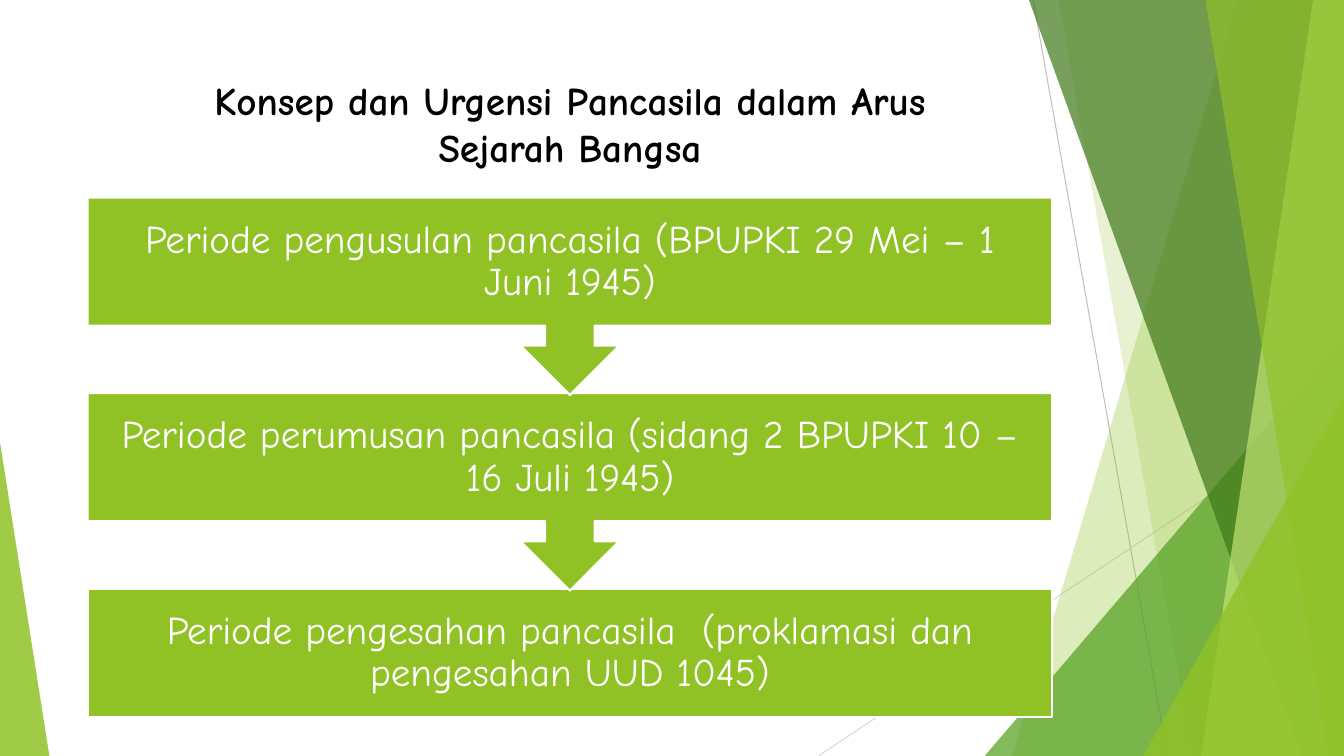
from lxml.etree import SubElement as Sub
from pptx import Presentation
from pptx.dml.color import RGBColor
from pptx.enum.shapes import MSO_CONNECTOR as Conn, MSO_SHAPE as Shape
from pptx.enum.text import MSO_ANCHOR as Anchor, MSO_AUTO_SIZE as Auto, PP_ALIGN as Align
from pptx.oxml.ns import qn
from pptx.util import Pt

LIME = RGBColor(0x90, 0xC2, 0x26)
GREEN = RGBColor(0x54, 0xA0, 0x21)
DARK = RGBColor(0x3F, 0x78, 0x19)
PALE = RGBColor(0xC0, 0xE4, 0x74)
GRAY = RGBColor(0xBF, 0xBF, 0xBF)
SILVER = RGBColor(0xD9, 0xD9, 0xD9)
WHITE = RGBColor(0xFF, 0xFF, 0xFF)
BLACK = RGBColor(0, 0, 0)
FONT = "Comic Neue"
WIDE, HIGH = 960, 540

LINES = [((738, 0), (834, 540), GRAY), ((960, 290), (584.6, 540), SILVER)]
BANDS = [
    (884.2, 722.9, LIME, 30),
    (756, 851.8, LIME, 20),
    (735.1, 929.5, DARK, 70),
    (938.2, 858.2, PALE, 70),
    (861.1, 949, LIME, 65),
]
PEAKS = [
    (703.4, 239.8, 256.6, 1, GREEN, 72),
    (816.5, 283, 143.5, 1, LIME, 80),
    (0, 316, 35.3, 0, LIME, 85),
]
TITLE = "Konsep dan Urgensi Pancasila dalam Arus Sejarah Bangsa"
STEPS = [
    "Periode pengusulan pancasila (BPUPKI 29 Mei – 1 Juni 1945)",
    "Periode perumusan pancasila (sidang 2 BPUPKI 10 – 16 Juli 1945)",
    "Periode pengesahan pancasila  (proklamasi dan pengesahan UUD 1045)",
]


def tint(shape, color, alpha):
    shape.shadow.inherit = False
    shape.line.fill.background()
    shape.fill.solid()
    shape.fill.fore_color.rgb = color
    node = shape.fill._xPr.find(".//" + qn("a:srgbClr"))
    Sub(node, qn("a:alpha")).set("val", str(alpha * 1000))


def add_line(slide, x, y, start, end, color):
    line = slide.shapes.add_connector(
        Conn.STRAIGHT, Pt(x + start[0]), Pt(y + start[1]), Pt(x + end[0]), Pt(y + end[1]))
    line.line.color.rgb = color
    line.line.width = Pt(0.75)
    Sub(line._element.spPr, qn("a:effectLst"))


def add_band(slide, x, y, w, h, top, foot, color, alpha):
    pen = slide.shapes.build_freeform(x + top, y, scale=Pt(1))
    pen.add_line_segments([(x + w, y), (x + w, y + h), (x + foot, y + h)], close=True)
    tint(pen.convert_to_shape(), color, alpha)


def add_peak(slide, x, y, h, left, top, width, tip, color, alpha):
    peak = slide.shapes.add_shape(
        Shape.ISOSCELES_TRIANGLE, Pt(x + left), Pt(y + top), Pt(width), Pt(h - top))
    peak.adjustments[0] = tip
    tint(peak, color, alpha)


def add_decor(slide, x, y, w, h):
    for line in LINES:
        add_line(slide, x, y, *line)
    for band in BANDS[:2]:
        add_band(slide, x, y, w, h, *band)
    add_peak(slide, x, y, h, *PEAKS[0])
    for band in BANDS[2:]:
        add_band(slide, x, y, w, h, *band)
    for peak in PEAKS[1:]:
        add_peak(slide, x, y, h, *peak)


def write(frame, text, color, bold):
    frame.text = text
    frame.word_wrap = True
    para = frame.paragraphs[0]
    para.alignment = Align.CENTER
    font = para.runs[0].font
    font.name, font.size, font.bold = FONT, Pt(28), bold
    font.color.rgb = color
    return para


def add_title(slide, x, y, w, h):
    title = slide.shapes.title
    title.left, title.top, title.width, title.height = Pt(x), Pt(y), Pt(w), Pt(h)
    frame = title.text_frame
    write(frame, TITLE, BLACK, True)
    frame.auto_size = Auto.NONE
    frame.vertical_anchor = Anchor.TOP


def add_step(slide, kind, text, x, y, w, h):
    step = slide.shapes.add_shape(kind, Pt(x), Pt(y), Pt(w), Pt(h))
    step.shadow.inherit = False
    step.fill.solid()
    step.fill.fore_color.rgb = LIME
    step.line.color.rgb = WHITE
    step.line.width = Pt(1.5)
    frame = step.text_frame
    frame.margin_left = frame.margin_right = Pt(15.8)
    frame.margin_top = frame.margin_bottom = Pt(15.8)
    frame.vertical_anchor = Anchor.MIDDLE
    write(frame, text, WHITE, False).line_spacing = 0.9
    return step


def add_flow(slide, x, y, w, h):
    box = 91.5
    pitch = (h - box) / (len(STEPS) - 1)
    tall = pitch + 1.4
    last = len(STEPS) - 1
    add_step(slide, Shape.RECTANGLE, STEPS[last], x, y + last * pitch, w, box)
    for i in reversed(range(last)):
        step = add_step(slide, Shape.DOWN_ARROW_CALLOUT, STEPS[i], x, y + i * pitch, w, tall)
        step.adjustments[3] = box / tall


def main():
    deck = Presentation()
    deck.slide_width, deck.slide_height = Pt(WIDE), Pt(HIGH)
    slide = deck.slides.add_slide(deck.slide_layouts[5])
    add_decor(slide, 0, 0, WIDE, HIGH)
    add_title(slide, 106.6, 51, 601, 75)
    add_flow(slide, 62.6, 141.1, 689, 370.9)
    deck.save("out.pptx")


if __name__ == "__main__":
    main()
